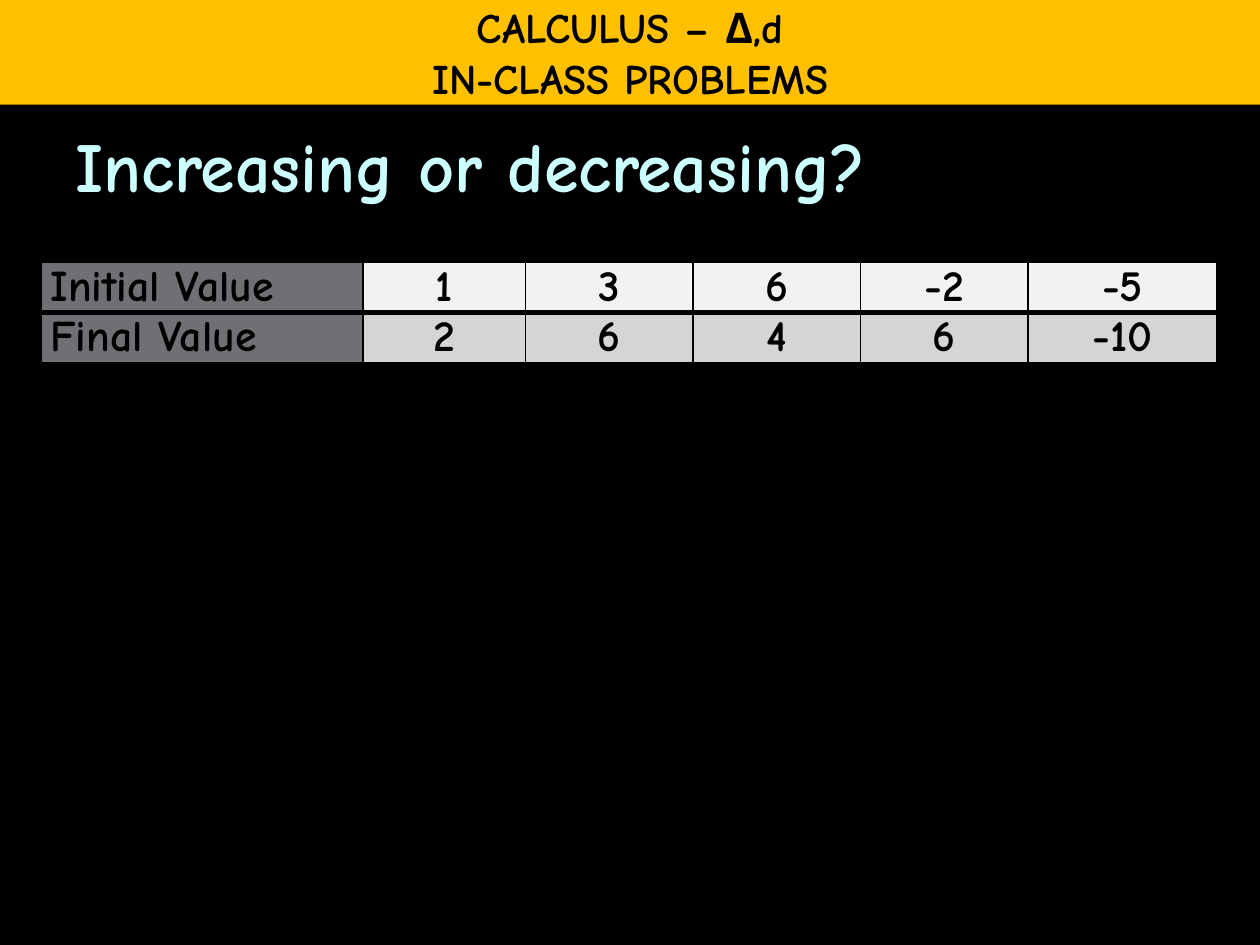
from lxml.etree import SubElement
from pptx import Presentation
from pptx.dml.color import RGBColor
from pptx.enum.text import MSO_ANCHOR, MSO_AUTO_SIZE, PP_ALIGN
from pptx.oxml.ns import qn
from pptx.util import Inches, Pt

FONT = "Comic Neue"
BANNER = ["CALCULUS – Δ,d", "IN-CLASS PROBLEMS"]
QUESTION = "Increasing or decreasing?"
ROWS = [
    ("Initial Value", "1", "3", "6", "-2", "-5"),
    ("Final Value", "2", "6", "4", "6", "-10"),
]
ROW_FILLS = ["F2F2F2", "D5D5D6"]
LABEL_FILL = "6F6F74"
COL_WIDTHS = [2.55, 1.29, 1.33, 1.33, 1.33, 1.5]
ROW_HEIGHT = 0.4


def paint(fill, color):
    fill.solid()
    fill.fore_color.rgb = RGBColor.from_string(color)


def style(p, size, color, align):
    p.alignment = align
    p.font.name = FONT
    p.font.size = Pt(size)
    p.font.bold = True
    paint(p.font.fill, color)


def place(sp, left, top, width, height):
    sp.left, sp.top = Inches(left), Inches(top)
    sp.width, sp.height = Inches(width), Inches(height)
    sp.text_frame.auto_size = MSO_AUTO_SIZE.NONE


def set_borders(cell, widths):
    tcPr = cell._tc.get_or_add_tcPr()
    for i, (side, width) in enumerate(zip("LRTB", widths)):
        ln = tcPr.makeelement(qn(f"a:ln{side}"), {"w": str(Pt(width))})
        fill = SubElement(ln, qn("a:solidFill"))
        SubElement(fill, qn("a:srgbClr"), val="000000")
        tcPr.insert(i, ln)


def add_banner(s):
    sp = s.shapes.title
    place(sp, 0, 0, 10, 0.83)
    paint(sp.fill, "FFC000")
    tf = sp.text_frame
    tf.word_wrap = False
    tf.vertical_anchor = MSO_ANCHOR.MIDDLE
    tf.text = "\n".join(BANNER)
    for p in tf.paragraphs:
        style(p, 24, "000000", PP_ALIGN.CENTER)


def add_question(s):
    sp = s.placeholders[1]
    place(sp, 0.5, 0.92, 9, 6.17)
    sp.text_frame.text = QUESTION
    p = sp.text_frame.paragraphs[0]
    style(p, 40, "CCFFFF", PP_ALIGN.LEFT)
    pPr = p._p.get_or_add_pPr()
    pPr.set("marL", "0")
    pPr.set("indent", "0")
    pPr.insert(0, pPr.makeelement(qn("a:buNone"), {}))


def add_values(s):
    table = s.shapes.add_table(
        len(ROWS), len(COL_WIDTHS), Inches(0.33), Inches(2.08),
        Inches(sum(COL_WIDTHS)), Inches(ROW_HEIGHT * len(ROWS))).table
    for col, width in zip(table.columns, COL_WIDTHS):
        col.width = Inches(width)
    for r, values in enumerate(ROWS):
        table.rows[r].height = Inches(ROW_HEIGHT)
        top, bottom = (1, 3) if r == 0 else (3, 1)
        for c, value in enumerate(values):
            cell = table.cell(r, c)
            cell.text = value
            cell.margin_left = cell.margin_right = Inches(0.07)
            cell.margin_top = cell.margin_bottom = 0
            paint(cell.fill, ROW_FILLS[r] if c else LABEL_FILL)
            set_borders(cell, (1, 1, top, bottom))
            align = PP_ALIGN.CENTER if c else PP_ALIGN.LEFT
            style(cell.text_frame.paragraphs[0], 25, "000000", align)


def main():
    prs = Presentation()
    prs.slide_width, prs.slide_height = Inches(10), Inches(7.5)
    s = prs.slides.add_slide(prs.slide_layouts[1])
    paint(s.background.fill, "000000")
    add_banner(s)
    add_question(s)
    add_values(s)
    prs.save("out.pptx")


if __name__ == "__main__":
    main()
